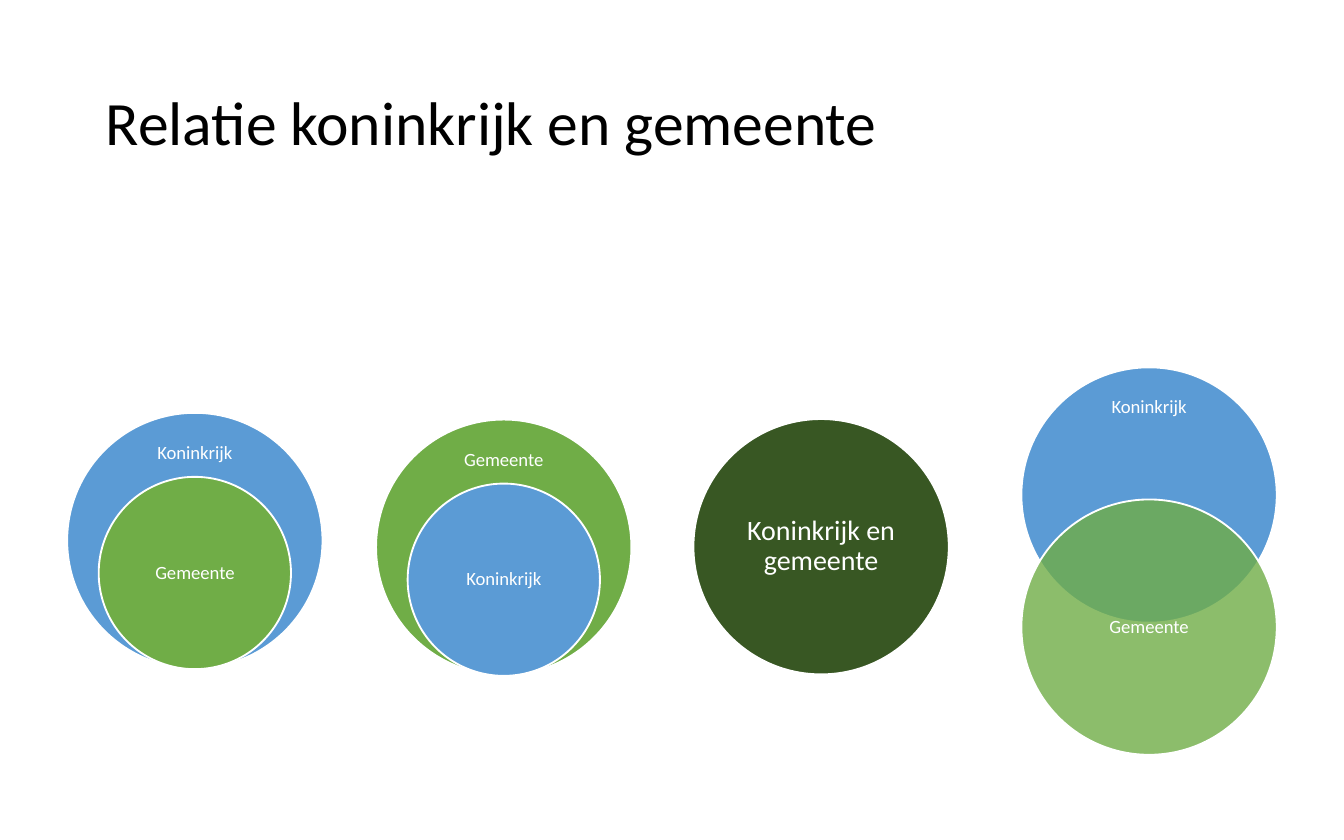
"""Build a slide with four diagrams of how kingdom and municipality relate."""
from lxml import etree
from pptx import Presentation
from pptx.dml.color import RGBColor
from pptx.enum.shapes import MSO_SHAPE
from pptx.enum.text import MSO_ANCHOR, MSO_AUTO_SIZE, PP_ALIGN
from pptx.oxml.ns import qn
from pptx.util import Pt

OVAL = MSO_SHAPE.OVAL
MIDDLE = MSO_ANCHOR.MIDDLE
NO_AUTOFIT = MSO_AUTO_SIZE.NONE
LEFT, CENTER = PP_ALIGN.LEFT, PP_ALIGN.CENTER

BLACK = RGBColor(0x00, 0x00, 0x00)
WHITE = RGBColor(0xFF, 0xFF, 0xFF)
BLUE = RGBColor(0x5B, 0x9B, 0xD5)
GREEN = RGBColor(0x70, 0xAD, 0x47)
DARK_GREEN = RGBColor(0x38, 0x57, 0x23)

OUTER, INNER = 136.8, 103
INSET_X, INSET_Y = (OUTER - INNER) / 2, OUTER - INNER + 0.5
HIGH_LABEL = (72, 23, 21.6)


def write(box, text, size, color, align, margins):
    frame = box.text_frame
    frame_format = {
        "word_wrap": True, "auto_size": NO_AUTOFIT, "vertical_anchor": MIDDLE,
        "margin_left": Pt(margins[0]), "margin_right": Pt(margins[0]),
        "margin_top": Pt(margins[1]), "margin_bottom": Pt(margins[1]),
    }
    for name, value in frame_format.items():
        setattr(frame, name, value)
    para = frame.paragraphs[0]
    para.alignment, para.line_spacing = align, 0.9
    span = para.add_run()
    span.text = text
    span.font.name, span.font.size = "Calibri", Pt(size)
    span.font.color.rgb = color


def add_circle(page, left, top, diameter, color, text, size=10, high=False, opacity=100):
    circle = page.shapes.add_shape(OVAL, Pt(left), Pt(top), Pt(diameter), Pt(diameter))
    circle.shadow.inherit = False
    circle.fill.solid()
    circle.fill.fore_color.rgb = color
    circle.line.color.rgb = WHITE
    circle.line.width = Pt(1)
    if opacity < 100:
        shade = circle.fill._xPr.find(qn("a:solidFill"))[0]
        etree.SubElement(shade, qn("a:alpha"), val=str(opacity * 1000))
    centred_label = (diameter * 0.707, diameter / 2, diameter / 2)
    width, height, middle = HIGH_LABEL if high else centred_label
    box = page.shapes.add_textbox(
        Pt(left + (diameter - width) / 2), Pt(top + middle - height / 2), Pt(width), Pt(height))
    margin = size * 0.57
    write(box, text, size, WHITE, CENTER, (margin, margin))


deck = Presentation()
deck.slide_width, deck.slide_height = Pt(720), Pt(450)
page = deck.slides.add_slide(deck.slide_layouts[5])

title = page.shapes.title
title_place = {"left": 49.5, "top": 24, "width": 621, "height": 87}
for name, value in title_place.items():
    setattr(title, name, Pt(value))
write(title, "Relatie koninkrijk en gemeente", 33, BLACK, LEFT, (7.2, 3.6))

nested = [
    (36, 221.2, BLUE, "Koninkrijk", GREEN, "Gemeente"),
    (201.5, 224.8, GREEN, "Gemeente", BLUE, "Koninkrijk"),
]
for left, top, outer_color, outer_text, inner_color, inner_text in nested:
    add_circle(page, left, top, OUTER, outer_color, outer_text, high=True)
    add_circle(page, left + INSET_X, top + INSET_Y, INNER, inner_color, inner_text)

add_circle(page, 371.5, 224.5, OUTER, DARK_GREEN, "Koninkrijk en gemeente", size=15)

add_circle(page, 547.2, 196.8, OUTER, BLUE, "Koninkrijk", high=True)
add_circle(page, 547.2, 267.6, OUTER, GREEN, "Gemeente", opacity=80)

deck.save("out.pptx")
